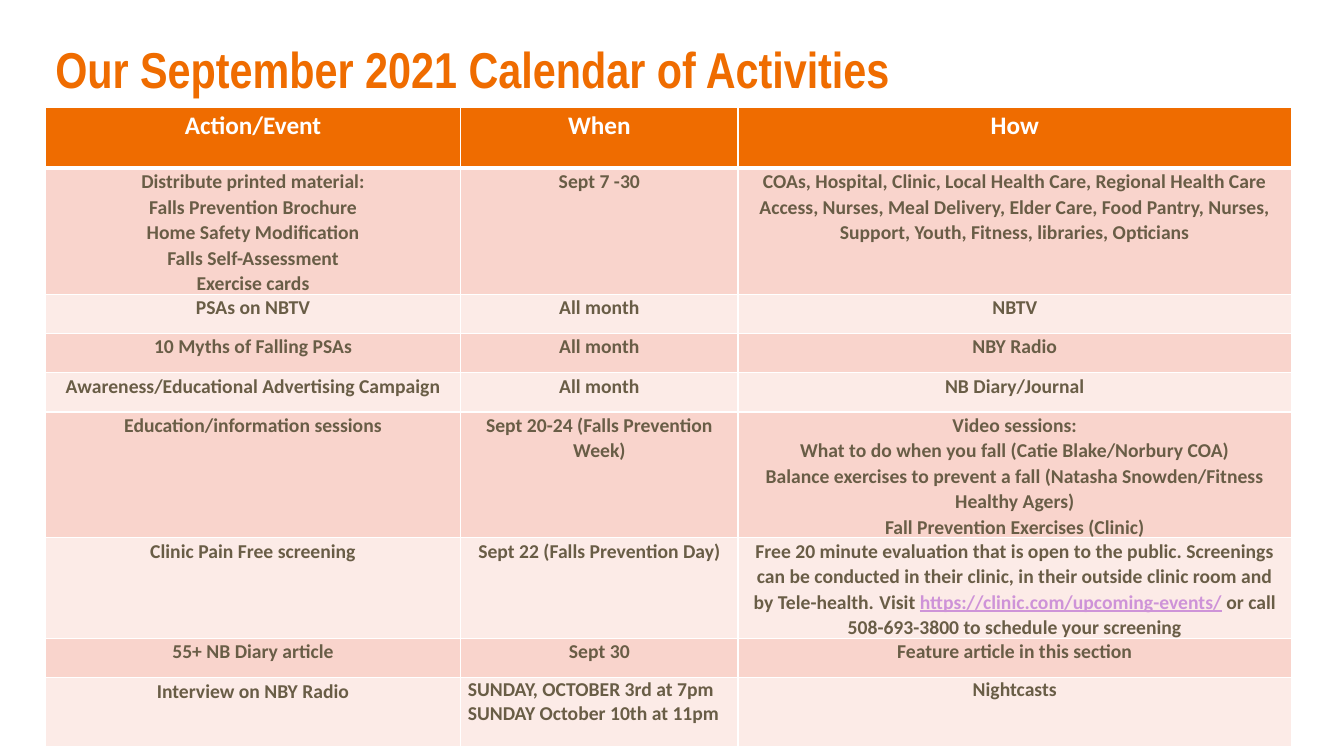
from dataclasses import dataclass

from lxml.etree import SubElement
from pptx import Presentation
from pptx.dml.color import RGBColor as Color
from pptx.enum.text import MSO_ANCHOR as Anchor, PP_ALIGN as Align
from pptx.oxml.ns import qn
from pptx.util import Inches, Pt


@dataclass(frozen=True)
class Theme:
    accent: str = "EF6C00"
    white: str = "FFFFFF"
    ink: str = "695D46"
    link: str = "CE93D8"
    bands: tuple = ("F9D4CC", "FCEBE7")
    title_font: str = "Arial Narrow"
    body_font: str = "Calibri"
    gap_font: str = "Arial"
    title_size: float = 36
    header_size: float = 18
    body_size: float = 14
    gap_size: float = 13.5
    line_spacing: float = 1.07
    thin: float = 1
    thick: float = 3


THEME = Theme()
TITLE = "Our September 2021 Calendar of Activities"
HEADERS = ("Action/Event", "When", "How")
COLUMN_WIDTHS = (4.12, 2.75, 5.49)
ROW_HEIGHTS = (0.6, 1.19, 0.39, 0.39, 0.39, 1.2, 0.96, 0.39, 0.68)

SCREENING = (
    ("Free 20 minute evaluation that is open to the public. Screenings can be "
     "conducted in their clinic, in their outside clinic room and by Tele-health.", {}),
    (" ", {"font": THEME.gap_font, "size": THEME.gap_size}),
    ("Visit ", {}),
    ("https://clinic.com/upcoming-events/", {"color": THEME.link, "underline": True}),
    (" or call 508-693-3800 to schedule your screening", {}),
)
ACTIVITIES = (
    ("Distribute printed material:\nFalls Prevention Brochure\nHome Safety Modification\n"
     "Falls Self-Assessment\nExercise cards",
     "Sept 7 -30",
     "COAs, Hospital, Clinic, Local Health Care, Regional Health Care Access, Nurses, "
     "Meal Delivery, Elder Care, Food Pantry, Nurses, Support, Youth, Fitness, "
     "libraries, Opticians"),
    ("PSAs on NBTV", "All month", "NBTV"),
    ("10 Myths of Falling PSAs", "All month", "NBY Radio"),
    ("Awareness/Educational Advertising Campaign", "All month", "NB Diary/Journal"),
    ("Education/information sessions",
     "Sept 20-24 (Falls Prevention Week)",
     "Video sessions:\nWhat to do when you fall (Catie Blake/Norbury COA)\n"
     "Balance exercises to prevent a fall (Natasha Snowden/Fitness Healthy Agers)\n"
     "Fall Prevention Exercises (Clinic)"),
    ("Clinic Pain Free screening", "Sept 22 (Falls Prevention Day)", SCREENING),
    ("55+ NB Diary article", "Sept 30", "Feature article in this section"),
    ("Interview on NBY Radio",
     "SUNDAY, OCTOBER 3rd at 7pm\nSUNDAY October 10th at 11pm",
     "Nightcasts"),
)


def add_span(para, text, font=THEME.body_font, size=THEME.body_size,
             color=THEME.ink, underline=False):
    span = para.add_run()
    span.text = text
    span.font.name = font
    span.font.size = Pt(size)
    span.font.bold = True
    span.font.underline = underline
    span.font.color.rgb = Color.from_string(color)


def write_text(frame, content, align=Align.CENTER, spacing=THEME.line_spacing, **style):
    if isinstance(content, str):
        lines = [((line, {}),) for line in content.split("\n")]
    else:
        lines = [content]
    for number, spans in enumerate(lines):
        para = frame.add_paragraph() if number else frame.paragraphs[0]
        para.alignment = align
        para.line_spacing = spacing
        for text, extra in spans:
            add_span(para, text, **{**style, **extra})


def set_borders(cell, top, bottom):
    properties = cell._tc.get_or_add_tcPr()
    widths = {"L": THEME.thin, "R": THEME.thin, "T": top, "B": bottom}
    for side, width in widths.items():
        line = SubElement(properties, qn(f"a:ln{side}"), w=str(Pt(width)))
        fill = SubElement(line, qn("a:solidFill"))
        SubElement(fill, qn("a:srgbClr"), val=THEME.white)


def format_cell(cell, fill, top=THEME.thin, bottom=THEME.thin):
    cell.margin_left = cell.margin_right = Inches(0.07)
    cell.margin_top = cell.margin_bottom = 0
    cell.vertical_anchor = Anchor.TOP
    set_borders(cell, top, bottom)
    cell.fill.solid()
    cell.fill.fore_color.rgb = Color.from_string(fill)


def add_title(page, left, top, width, height):
    box = page.shapes.add_textbox(Inches(left), Inches(top), Inches(width), Inches(height))
    frame = box.text_frame
    frame.word_wrap = True
    frame.vertical_anchor = Anchor.TOP
    frame.margin_left = frame.margin_right = Inches(0.1)
    frame.margin_top = frame.margin_bottom = Inches(0.1)
    write_text(frame, TITLE, align=Align.LEFT, spacing=1.0, font=THEME.title_font,
               size=THEME.title_size, color=THEME.accent)


def add_calendar(page, left, top, width, height):
    table = page.shapes.add_table(len(ROW_HEIGHTS), len(HEADERS), Inches(left),
                                  Inches(top), Inches(width), Inches(height)).table
    table.first_row = table.horz_banding = False
    for column, size in zip(table.columns, COLUMN_WIDTHS):
        column.width = Inches(size)
    for row, size in zip(table.rows, ROW_HEIGHTS):
        row.height = Inches(size)

    for column, header in enumerate(HEADERS):
        cell = table.cell(0, column)
        format_cell(cell, THEME.accent, bottom=THEME.thick)
        write_text(cell.text_frame, header, size=THEME.header_size, color=THEME.white)

    for row, activity in enumerate(ACTIVITIES, start=1):
        for column, content in enumerate(activity):
            cell = table.cell(row, column)
            format_cell(cell, THEME.bands[(row - 1) % 2],
                        top=THEME.thick if row == 1 else THEME.thin)
            closing = row == len(ACTIVITIES)
            write_text(cell.text_frame, content,
                       align=Align.LEFT if closing and column == 1 else Align.CENTER,
                       spacing=1.0 if closing and column else THEME.line_spacing)


def main():
    deck = Presentation()
    deck.slide_width, deck.slide_height = Inches(13.33), Inches(7.5)
    page = deck.slides.add_slide(deck.slide_layouts[6])
    add_title(page, 0.45, 0.28, 12.42, 1.03)
    add_calendar(page, 0.45, 1.07, sum(COLUMN_WIDTHS), sum(ROW_HEIGHTS))
    deck.save("out.pptx")


if __name__ == "__main__":
    main()
